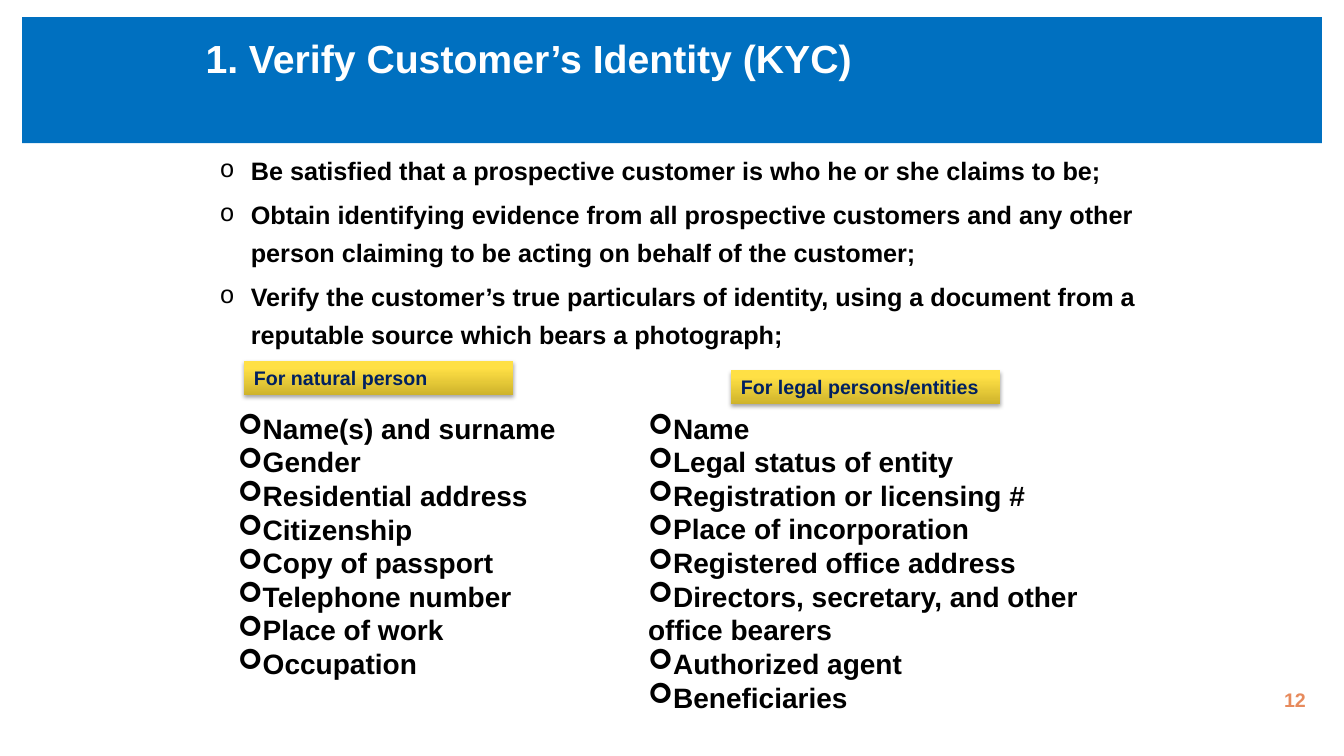
from lxml.etree import SubElement
from pptx import Presentation
from pptx.dml.color import RGBColor
from pptx.enum.shapes import MSO_SHAPE as Shape
from pptx.enum.text import MSO_ANCHOR as Anchor, MSO_AUTO_SIZE as Fit, PP_ALIGN as Align
from pptx.oxml.ns import qn
from pptx.util import Inches, Pt

BLUE = RGBColor(0x00, 0x70, 0xC0)
NAVY = RGBColor(0x00, 0x20, 0x60)
WHITE = RGBColor(0xFF, 0xFF, 0xFF)
BLACK = RGBColor(0x00, 0x00, 0x00)
CORAL = RGBColor(0xE7, 0x8A, 0x5C)
GOLD = RGBColor(0xCE, 0xB3, 0x2B)
YELLOW = RGBColor(0xFF, 0xE0, 0x45)

DUTIES = [
    "Be satisfied that a prospective customer is who he or she claims to be;",
    "Obtain identifying evidence from all prospective customers and any other "
    "person claiming to be acting on behalf of the customer;",
    "Verify the customer’s true particulars of identity, using a document from a "
    "reputable source which bears a photograph;",
]
NATURAL = [
    "Name(s) and surname", "Gender", "Residential address", "Citizenship",
    "Copy of passport", "Telephone number", "Place of work", "Occupation",
]
LEGAL = [
    "Name", "Legal status of entity", "Registration or licensing #",
    "Place of incorporation", "Registered office address",
    "Directors, secretary, and other office bearers", "Authorized agent",
    "Beneficiaries",
]


def add_rect(slide, *box):
    """Add a rectangle with no outline and no inherited shadow."""
    rect = slide.shapes.add_shape(Shape.RECTANGLE, *map(Inches, box))
    rect.shadow.inherit = False
    rect.line.fill.background()
    return rect


def add_box(slide, *box):
    """Add a wrapping text box and return its text frame."""
    frame = slide.shapes.add_textbox(*map(Inches, box)).text_frame
    frame.word_wrap = True
    return frame


def write(para, text, size, color):
    """Add one bold Arial run to a paragraph."""
    run = para.add_run()
    run.text = text
    font = run.font
    font.name, font.size, font.bold = "Arial", Pt(size), True
    font.color.rgb = color


def set_bullet(para, mark, face, indent):
    """Give a paragraph a bullet with a hanging indent."""
    props = para._p.get_or_add_pPr()
    props.set("marL", str(Inches(indent)))
    props.set("indent", str(-Inches(indent)))
    SubElement(props, qn("a:buFont"), typeface=face)
    SubElement(props, qn("a:buChar"), char=mark)


def add_list(frame, items, size, mark, face, indent=0):
    """Fill a text frame with bulleted items and return the paragraphs."""
    paras = [frame.paragraphs[0]] + [frame.add_paragraph() for _ in items[1:]]
    for para, item in zip(paras, items):
        set_bullet(para, mark, face, indent)
        write(para, item, size, BLACK)
    return paras


def add_title(slide, text):
    """Add the blue band with the slide title in its upper part."""
    band = add_rect(slide, 0.22, 0.17, 12.89, 1.25)
    band.fill.solid()
    band.fill.fore_color.rgb = BLUE
    frame = add_box(slide, 1.94, 0.27, 7.97, 1.06)
    frame.vertical_anchor = Anchor.MIDDLE
    frame.margin_top, frame.margin_bottom = 0, Inches(0.45)
    write(frame.paragraphs[0], text, 28, WHITE)


def add_duties(slide):
    """Add the main list with its wide line spacing."""
    frame = add_box(slide, 2.08, 1.42, 9.33, 2.08)
    for para in add_list(frame, DUTIES, 18, "o", "Courier New", 0.31):
        para.line_spacing = 1.25
        para.space_before, para.space_after = Pt(3.6), Pt(0.9)


def add_details(slide, items, left, width, height):
    """Add a column of required details."""
    frame = add_box(slide, left, 4.03, width, height)
    frame.auto_size = Fit.SHAPE_TO_FIT_TEXT
    add_list(frame, items, 20, "➢", "Wingdings")


def add_label(slide, text, left, top):
    """Add a yellow gradient label with a soft shadow."""
    label = add_rect(slide, left, top, 2.67, 0.34)
    label.fill.gradient()
    label.fill.gradient_angle = 90
    for stop, color, place in zip(label.fill.gradient_stops, (GOLD, YELLOW), (0, 0.8)):
        stop.color.rgb, stop.position = color, place
    glow = SubElement(
        label._element.spPr.find(qn("a:effectLst")), qn("a:outerShdw"),
        blurRad=str(Pt(3.1)), dist=str(Pt(1.8)), dir="5400000", rotWithShape="0")
    tint = SubElement(glow, qn("a:srgbClr"), val=str(BLACK))
    SubElement(tint, qn("a:alpha"), val="35000")
    frame = label.text_frame
    frame.word_wrap, frame.auto_size = True, Fit.SHAPE_TO_FIT_TEXT
    frame.vertical_anchor = Anchor.TOP
    frame.paragraphs[0].alignment = Align.LEFT
    write(frame.paragraphs[0], text, 14, NAVY)


def add_number(slide, text):
    """Add the slide number at the lower right."""
    para = add_box(slide, 9.94, 6.78, 3.11, 0.52).paragraphs[0]
    para.alignment = Align.RIGHT
    write(para, text, 14, CORAL)


def main():
    """Build the slide and save it."""
    deck = Presentation()
    deck.slide_width, deck.slide_height = Inches(13.33), Inches(7.5)
    slide = deck.slides.add_slide(deck.slide_layouts[6])
    add_title(slide, "1. Verify Customer’s Identity (KYC)")
    add_number(slide, "12")
    add_duties(slide)
    add_details(slide, NATURAL, 2.26, 3.42, 2.79)
    add_details(slide, LEGAL, 6.33, 5, 3.13)
    add_label(slide, "For legal persons/entities", 7.25, 3.67)
    add_label(slide, "For natural person", 2.42, 3.58)
    deck.save("out.pptx")


if __name__ == "__main__":
    main()
